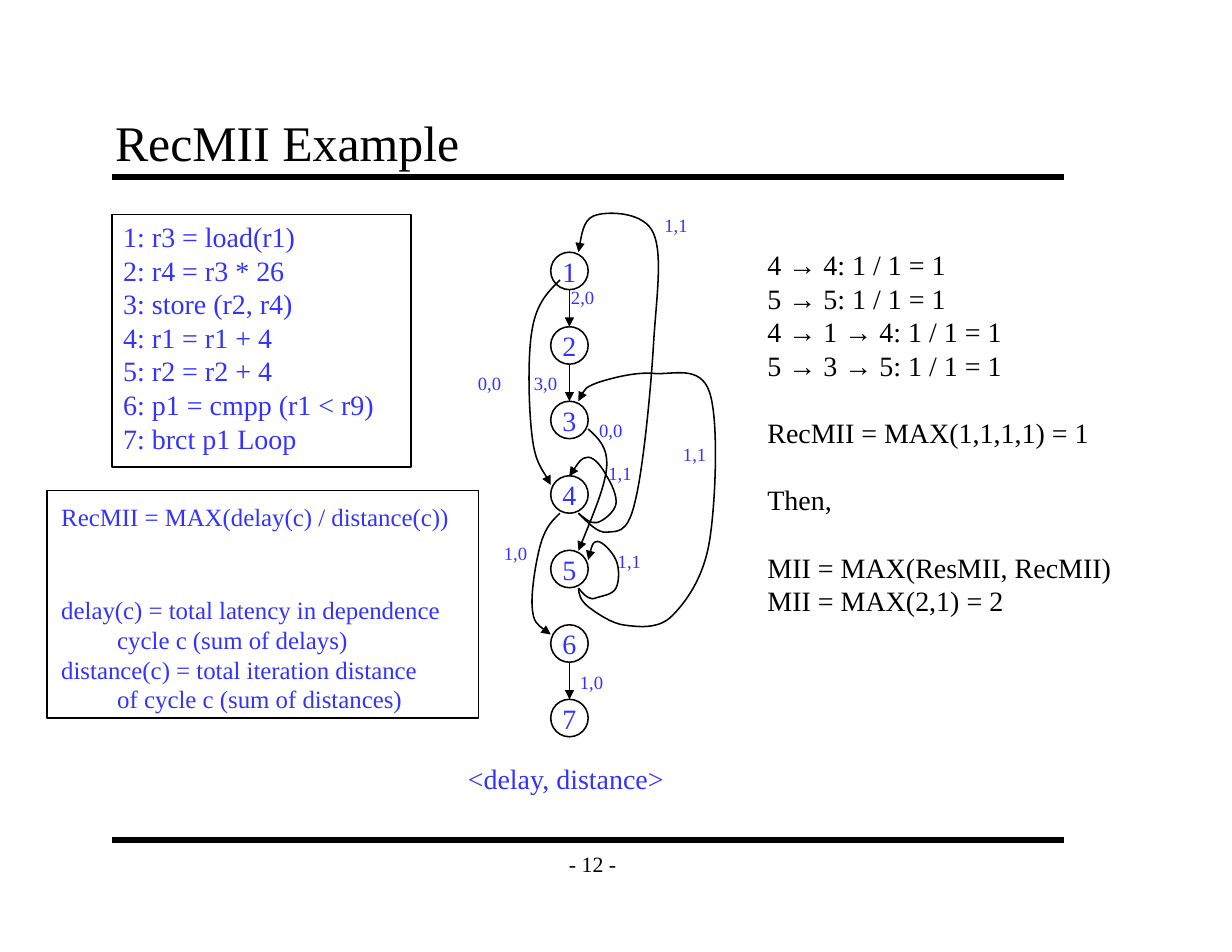
import pptx
import pptx.dml.color
import pptx.enum.shapes
import pptx.enum.text
import pptx.oxml
import pptx.oxml.ns
import pptx.util
import lxml.etree

Cm = pptx.util.Cm
Pt = pptx.util.Pt
qn = pptx.oxml.ns.qn
ALIGN = pptx.enum.text.PP_ALIGN
ANCHOR = pptx.enum.text.MSO_ANCHOR
SHAPE = pptx.enum.shapes.MSO_SHAPE

COLORS = {"ink": "000000", "accent": "3333FF"}
FONT = "Times New Roman"


class SlideBuilder:
    def __init__(self, slide):
        self.slide = slide
        self.shapes = slide.shapes

    def color(self, name):
        return pptx.dml.color.RGBColor.from_string(COLORS[name])

    def place(self, shape, left, top, width, height):
        shape.left, shape.top = Cm(left), Cm(top)
        shape.width, shape.height = Cm(width), Cm(height)

    def fill_text(self, shape, text, size, color, align=ALIGN.LEFT,
                  anchor=ANCHOR.TOP, wrap=True, spacing=None, gaps=()):
        frame = shape.text_frame
        frame.text = text
        frame.word_wrap = wrap
        frame.auto_size = pptx.enum.text.MSO_AUTO_SIZE.NONE
        frame.vertical_anchor = anchor
        for index, paragraph in enumerate(frame.paragraphs):
            paragraph.alignment = align
            paragraph.space_before = Pt(spacing if index in gaps else 0)
            if spacing:
                paragraph.line_spacing = Pt(spacing)
            for run in paragraph.runs:
                run.font.name = FONT
                run.font.size = Pt(size)
                run.font.color.rgb = self.color(color)

    def title(self, text, box):
        shape = self.shapes.title
        self.place(shape, *box)
        self.fill_text(shape, text, 32, "ink", anchor=ANCHOR.BOTTOM)
        shape.text_frame.margin_left = Cm(0.28)
        shape.text_frame.margin_bottom = Cm(0.15)

    def listing(self, index, lines, box, color, gaps=()):
        shape = self.slide.placeholders[index]
        self.place(shape, *box)
        self.fill_text(shape, "\n".join(lines), 18, color, spacing=21.6, gaps=gaps)
        for paragraph in shape.text_frame.paragraphs:
            properties = paragraph._p.get_or_add_pPr()
            properties.set("marL", "0")
            properties.set("indent", "0")
            lxml.etree.SubElement(properties, qn("a:buNone"))

    def text(self, text, box, size, color="accent", **style):
        shape = self.shapes.add_textbox(*(Cm(value) for value in box))
        self.fill_text(shape, text, size, color, **style)

    def outline(self, shape, weight=1):
        shape.line.color.rgb = self.color("ink")
        shape.line.width = Pt(weight)

    def shape(self, preset, box):
        shape = self.shapes.add_shape(preset, *(Cm(value) for value in box))
        shape.shadow.inherit = False
        shape.fill.background()
        self.outline(shape)
        return shape

    def node(self, text, box):
        shape = self.shape(SHAPE.OVAL, box)
        self.fill_text(shape, text, 18, "accent", align=ALIGN.CENTER,
                       anchor=ANCHOR.MIDDLE, wrap=False)

    def arrowhead(self, shape):
        line = shape.line._get_or_add_ln()
        lxml.etree.SubElement(line, qn("a:tailEnd"), type="triangle")

    def line(self, x1, y1, x2, y2, weight=1, arrow=False):
        connector = self.shapes.add_connector(
            pptx.enum.shapes.MSO_CONNECTOR.STRAIGHT, Cm(x1), Cm(y1), Cm(x2), Cm(y2))
        self.outline(connector, weight)
        if arrow:
            self.arrowhead(connector)
        lxml.etree.SubElement(connector._element.spPr, qn("a:effectLst"))

    def curve(self, points):
        points = [(Cm(x), Cm(y)) for x, y in points]
        builder = self.shapes.build_freeform(*points[0])
        builder.add_line_segments(points[1:], close=False)
        shape = builder.convert_to_shape()
        shape.shadow.inherit = False
        shape.fill.background()
        self.outline(shape)
        self.arrowhead(shape)
        outline = shape._element.find(".//" + qn("a:path"))
        segments = outline.findall(qn("a:lnTo"))
        for start in range(0, len(segments), 3):
            bezier = lxml.etree.SubElement(outline, qn("a:cubicBezTo"))
            for segment in segments[start:start + 3]:
                bezier.append(segment[0])
                outline.remove(segment)


CODE = ["1: r3 = load(r1)", "2: r4 = r3 * 26", "3: store (r2, r4)",
        "4: r1 = r1 + 4", "5: r2 = r2 + 4", "6: p1 = cmpp (r1 < r9)",
        "7: brct p1 Loop"]
RESULTS = ["4 → 4: 1 / 1 = 1", "5 → 5: 1 / 1 = 1", "4 → 1 → 4: 1 / 1 = 1",
           "5 → 3 → 5: 1 / 1 = 1", "RecMII = MAX(1,1,1,1) = 1", "Then,",
           "MII = MAX(ResMII, RecMII)", "MII = MAX(2,1) = 2"]
DEFINITIONS = ("delay(c) = total latency in dependence\v\tcycle c (sum of delays)\n"
               "distance(c) = total iteration distance\v\tof cycle c (sum of distances)")

NODE_LEFT, NODE_TOP, NODE_SIZE, NODE_PITCH = 12.49, 5.72, 0.85, 1.69

CURVES = {
    "1 to 4": [(12.7, 6.35), (12.45, 6.6), (12.17, 6.86), (12.07, 7.47),
               (11.96, 8.05), (11.99, 9.3), (12.07, 9.91),
               (12.14, 10.49), (12.42, 10.82), (12.49, 11)],
    "3 to 5": [(13.34, 9.73), (13.56, 9.93), (13.79, 10.13), (13.76, 10.59),
               (13.72, 11.05), (13.41, 11.76), (13.12, 12.49)],
    "4 to 6": [(12.7, 11.64), (12.55, 11.79), (12.4, 11.91), (12.28, 12.28),
               (12.17, 12.62), (12.04, 13.41), (12.07, 13.76),
               (12.09, 14.12), (12.29, 14.25), (12.49, 14.39)],
    "4 to 1": [(13.12, 11.64), (13.34, 11.86), (13.55, 12.09), (13.76, 12.07),
               (13.97, 12.04), (14.22, 12.14), (14.39, 11.43),
               (14.58, 10.72), (14.76, 8.86), (14.82, 7.83),
               (14.88, 6.81), (15.04, 5.79), (14.82, 5.29),
               (14.61, 4.8), (13.82, 4.8), (13.55, 4.87),
               (13.26, 4.93), (13.18, 5.33), (13.12, 5.72)],
    "4 to 4": [(13.12, 11.64), (13.26, 11.76), (13.41, 11.89), (13.55, 11.85),
               (13.69, 11.81), (13.94, 11.61), (13.97, 11.43),
               (14, 11.25), (13.87, 10.97), (13.76, 10.8),
               (13.67, 10.62), (13.49, 10.37), (13.34, 10.37),
               (13.18, 10.37), (13.06, 10.59), (12.91, 10.8)],
    "5 to 5": [(13.12, 13.34), (13.18, 13.41), (13.26, 13.51), (13.34, 13.55),
               (13.41, 13.59), (13.44, 13.59), (13.55, 13.55),
               (13.67, 13.51), (13.89, 13.49), (13.97, 13.34),
               (14.05, 13.18), (14.05, 12.88), (13.97, 12.7),
               (13.89, 12.52), (13.67, 12.28), (13.55, 12.28),
               (13.44, 12.28), (13.39, 12.49), (13.34, 12.7)],
    "5 to 3": [(13.12, 13.34), (13.13, 13.49), (13.16, 13.61), (13.34, 13.76),
               (13.51, 13.89), (13.87, 14.15), (14.18, 14.18),
               (14.5, 14.22), (14.94, 14.27), (15.24, 13.97),
               (15.54, 13.67), (15.95, 13.13), (16.09, 12.28),
               (16.23, 11.43), (16.31, 9.53), (16.09, 8.89),
               (15.88, 8.26), (15.24, 8.51), (14.82, 8.47),
               (14.4, 8.43), (13.82, 8.59), (13.55, 8.68),
               (13.26, 8.79), (13.18, 8.94), (13.12, 9.1)],
}
EDGE_LABELS = [("1,0", 11.18, 12.17), ("1,0", 12.9, 15.09), ("0,0", 10.59, 8.31),
               ("3,0", 11.86, 8.31), ("2,0", 12.7, 6.35), ("1,1", 14.82, 4.72),
               ("1,1", 15.24, 9.93), ("1,1", 13.76, 12.34), ("1,1", 13.55, 10.36),
               ("0,0", 13.34, 9.37)]


def main():
    presentation = pptx.Presentation()
    presentation.slide_width, presentation.slide_height = Cm(27.94), Cm(21.59)
    builder = SlideBuilder(presentation.slides.add_slide(presentation.slide_layouts[3]))

    for y in (4.02, 19.05):
        builder.line(2.54, y, 24.13, y, weight=4)
    builder.text("- 12 -", (12.49, 19.05, 1.9, 1.06), 14, "ink",
                 align=ALIGN.CENTER, anchor=ANCHOR.MIDDLE, wrap=False)
    builder.title("RecMII Example", (2.33, 2.33, 21.59, 1.7))
    builder.listing(1, CODE, (2.54, 4.85, 6.78, 5.6), "accent")
    builder.shape(SHAPE.RECTANGLE, (2.54, 4.87, 6.78, 5.72))

    for index in range(7):
        top = NODE_TOP + index * NODE_PITCH
        builder.node(str(index + 1), (NODE_LEFT, top, NODE_SIZE, NODE_SIZE))
        if index in (0, 1, 5):
            center = NODE_LEFT + NODE_SIZE / 2
            builder.line(center, top + NODE_SIZE, center, top + NODE_PITCH, arrow=True)
    for points in CURVES.values():
        builder.curve(points)
    for label, left, top in EDGE_LABELS:
        builder.text(label, (left, top, 1.04, 0.76), 12, wrap=False)
    builder.text("<delay, distance>", (10.36, 17.15, 5, 1.02), 18, wrap=False)

    builder.listing(2, RESULTS, (17.15, 5.49, 8.6, 8.64), "ink", gaps=(4, 5, 6))
    builder.text("RecMII = MAX(delay(c) / distance(c))", (1.14, 11.25, 9.45, 0.94), 16)
    builder.text(DEFINITIONS, (1.14, 13.36, 9.7, 3), 16, spacing=19.2)
    builder.shape(SHAPE.RECTANGLE, (1.07, 11.13, 9.78, 5.16))
    presentation.save("out.pptx")


if __name__ == "__main__":
    main()
